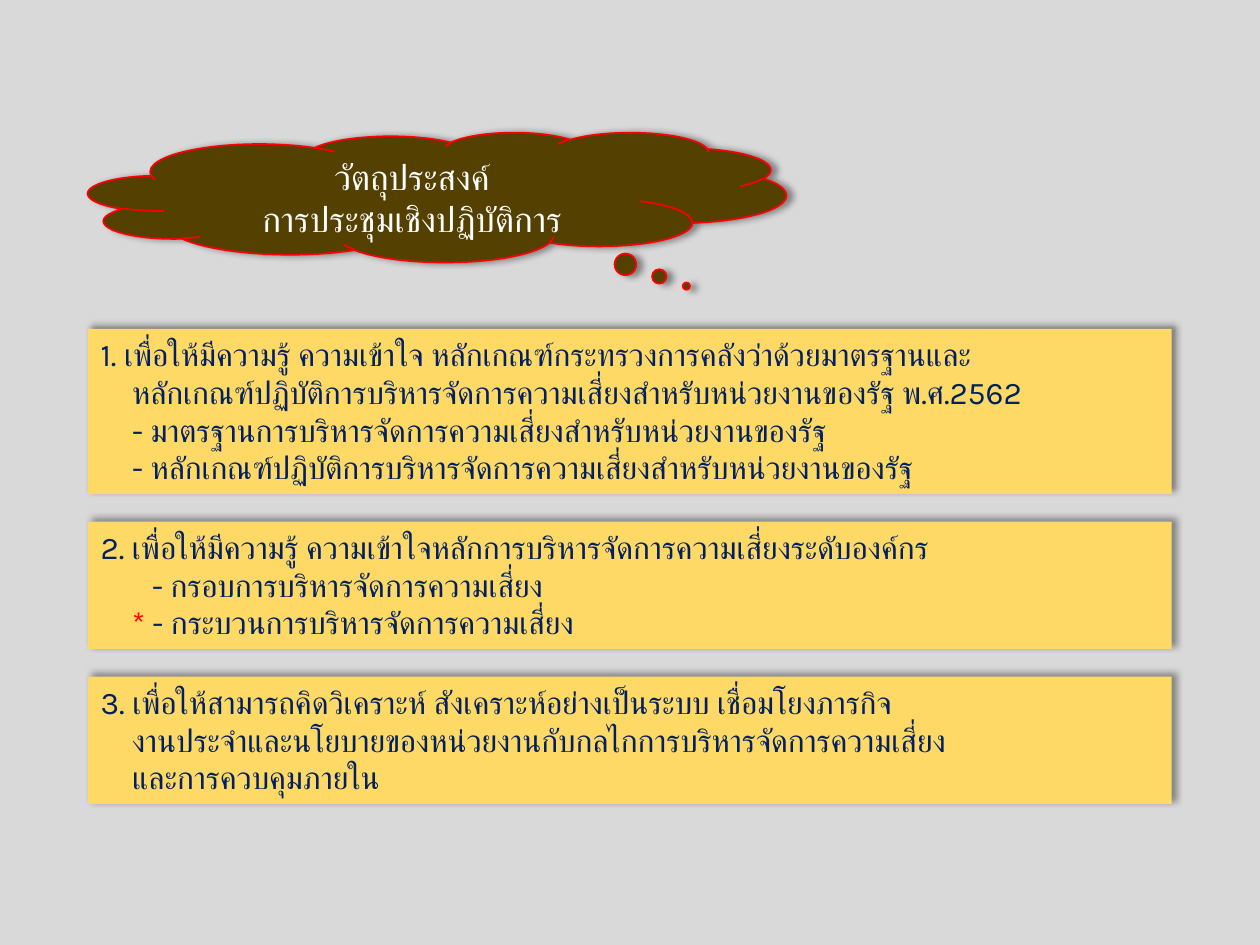
"""Build the workshop objectives slide."""
import dataclasses

import lxml.etree
import pptx
import pptx.dml.color
import pptx.enum.shapes
import pptx.enum.text
import pptx.oxml.ns
import pptx.util

Inches = pptx.util.Inches
Pt = pptx.util.Pt
qn = pptx.oxml.ns.qn
Shapes = pptx.enum.shapes.MSO_SHAPE
Align = pptx.enum.text.PP_ALIGN
Anchor = pptx.enum.text.MSO_ANCHOR
AutoSize = pptx.enum.text.MSO_AUTO_SIZE

TITLE_ONLY = 5
INDENT, DEEP_INDENT = 0.25, 0.41
LEFT, WIDTH = 0.7, 8.6
FIRST_TOP, GAP = 2.61, 0.22
LINE_HEIGHT, PADDING = 0.3, 0.11


@dataclasses.dataclass(frozen=True)
class Theme:
    """Colours, font and type sizes."""

    font: str = "Karla"
    title_size: int = 20
    body_size: int = 18
    background: str = "D9D9D9"
    panel: str = "FFD966"
    cloud: str = "544000"
    accent: str = "FF0000"
    body: str = "002060"
    title: str = "FFFFFF"


def rgb(value):
    """Return a colour from its hex value."""
    return pptx.dml.color.RGBColor.from_string(value)


def apply_format(target, values):
    """Set each attribute named in a dict."""
    for name, value in values.items():
        setattr(target, name, value)


class SlideBuilder:
    """Hold the theme and current slide, and draw its elements."""

    def __init__(self, slide, theme):
        """Keep the slide and theme and paint the background."""
        self.slide, self.theme = slide, theme
        slide.background.fill.solid()
        slide.background.fill.fore_color.rgb = rgb(theme.background)

    def shape(self, kind, box, fill, shadow_angle):
        """Add a filled shape with a soft shadow and no outline."""
        shape = self.slide.shapes.add_shape(kind, *map(Inches, box))
        shape.fill.solid()
        shape.fill.fore_color.rgb = rgb(fill)
        shape.line.fill.background()
        shape.shadow.inherit = False
        effects = shape._element.spPr.find(qn("a:effectLst"))
        shadow = lxml.etree.SubElement(
            effects, qn("a:outerShdw"), blurRad=str(Pt(4)), dist=str(Pt(3)),
            dir=str(shadow_angle * 60000), algn="bl", rotWithShape="0")
        colour = lxml.etree.SubElement(shadow, qn("a:srgbClr"), val="000000")
        lxml.etree.SubElement(colour, qn("a:alpha"), val="40000")
        return shape

    def run(self, paragraph, text, size, colour):
        """Add a run in the theme font for Latin and Thai letters."""
        run = paragraph.add_run()
        run.text = text
        apply_format(run.font, {"name": self.theme.font, "size": Pt(size), "bold": False})
        run.font.color.rgb = rgb(colour)
        lxml.etree.SubElement(run._r.get_or_add_rPr(), qn("a:cs"), typeface=self.theme.font)

    def cloud(self, box):
        """Add the outlined thought cloud."""
        shape = self.shape(Shapes.CLOUD_CALLOUT, box, self.theme.cloud, 0)
        for index, value in enumerate((0.357, 0.686)):
            shape.adjustments[index] = value
        shape.line.color.rgb = rgb(self.theme.accent)
        shape.line.width = Pt(1)

    def title(self, lines, box):
        """Place the title placeholder in front of the cloud."""
        title = self.slide.shapes.title
        apply_format(title, dict(zip(("left", "top", "width", "height"), map(Inches, box))))
        frame = title.text_frame
        apply_format(frame, {"word_wrap": True, "auto_size": AutoSize.NONE,
                             "vertical_anchor": Anchor.MIDDLE})
        for index, line in enumerate(lines):
            paragraph = frame.add_paragraph() if index else frame.paragraphs[0]
            paragraph.alignment = Align.CENTER
            self.run(paragraph, line, self.theme.title_size, self.theme.title)
        self.slide.shapes._spTree.append(title._element)

    def panel(self, lines, top):
        """Add an objective panel and return its height."""
        height = len(lines) * LINE_HEIGHT + PADDING
        shape = self.shape(Shapes.RECTANGLE, (LEFT, top, WIDTH, height), self.theme.panel, 315)
        frame = shape.text_frame
        apply_format(frame, {"word_wrap": True, "auto_size": AutoSize.SHAPE_TO_FIT_TEXT,
                             "vertical_anchor": Anchor.TOP})
        for index, (indent, text) in enumerate(lines):
            paragraph = frame.add_paragraph() if index else frame.paragraphs[0]
            paragraph.alignment = Align.LEFT
            paragraph._p.get_or_add_pPr().set("marL", str(Inches(indent)))
            if text.startswith("*"):
                self.run(paragraph, "*", self.theme.body_size, self.theme.accent)
                text = text[1:]
            self.run(paragraph, text, self.theme.body_size, self.theme.body)
        return height


OBJECTIVES = [
    [
        (0, "1. เพื่อให้มีความรู้ ความเข้าใจ หลักเกณฑ์กระทรวงการคลังว่าด้วยมาตรฐานและ"),
        (INDENT, "หลักเกณฑ์ปฏิบัติการบริหารจัดการความเสี่ยงสำหรับหน่วยงานของรัฐ พ.ศ.2562"),
        (INDENT, "- มาตรฐานการบริหารจัดการความเสี่ยงสำหรับหน่วยงานของรัฐ"),
        (INDENT, "- หลักเกณฑ์ปฏิบัติการบริหารจัดการความเสี่ยงสำหรับหน่วยงานของรัฐ"),
    ],
    [
        (0, "2. เพื่อให้มีความรู้ ความเข้าใจหลักการบริหารจัดการความเสี่ยงระดับองค์กร"),
        (DEEP_INDENT, "- กรอบการบริหารจัดการความเสี่ยง"),
        (INDENT, "* - กระบวนการบริหารจัดการความเสี่ยง"),
    ],
    [
        (0, "3. เพื่อให้สามารถคิดวิเคราะห์ สังเคราะห์อย่างเป็นระบบ เชื่อมโยงภารกิจ"),
        (INDENT, "งานประจำและนโยบายของหน่วยงานกับกลไกการบริหารจัดการความเสี่ยง"),
        (INDENT, "และการควบคุมภายใน"),
    ],
]


def main():
    """Build and save the presentation."""
    presentation = pptx.Presentation()
    apply_format(presentation, {"slide_width": Inches(10), "slide_height": Inches(7.5)})
    slide = presentation.slides.add_slide(presentation.slide_layouts[TITLE_ONLY])
    builder = SlideBuilder(slide, Theme())
    builder.cloud((LEFT, 1.05, 5.54, 1.03))
    builder.title(["วัตถุประสงค์", "การประชุมเชิงปฏิบัติการ"], (1.27, 1.05, 4, 1.03))
    top = FIRST_TOP
    for lines in OBJECTIVES:
        top += builder.panel(lines, top) + GAP
    presentation.save("out.pptx")


if __name__ == "__main__":
    main()
